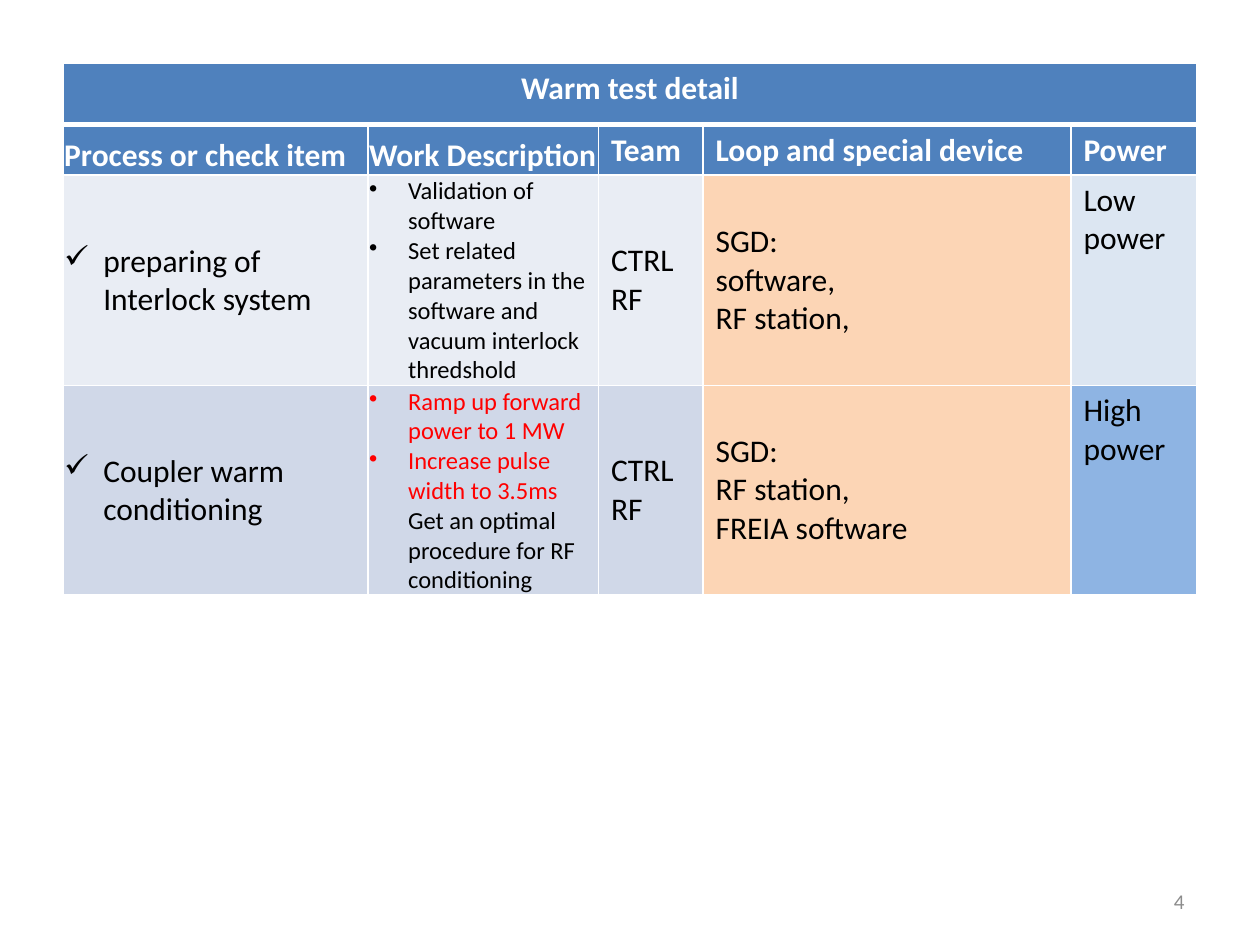
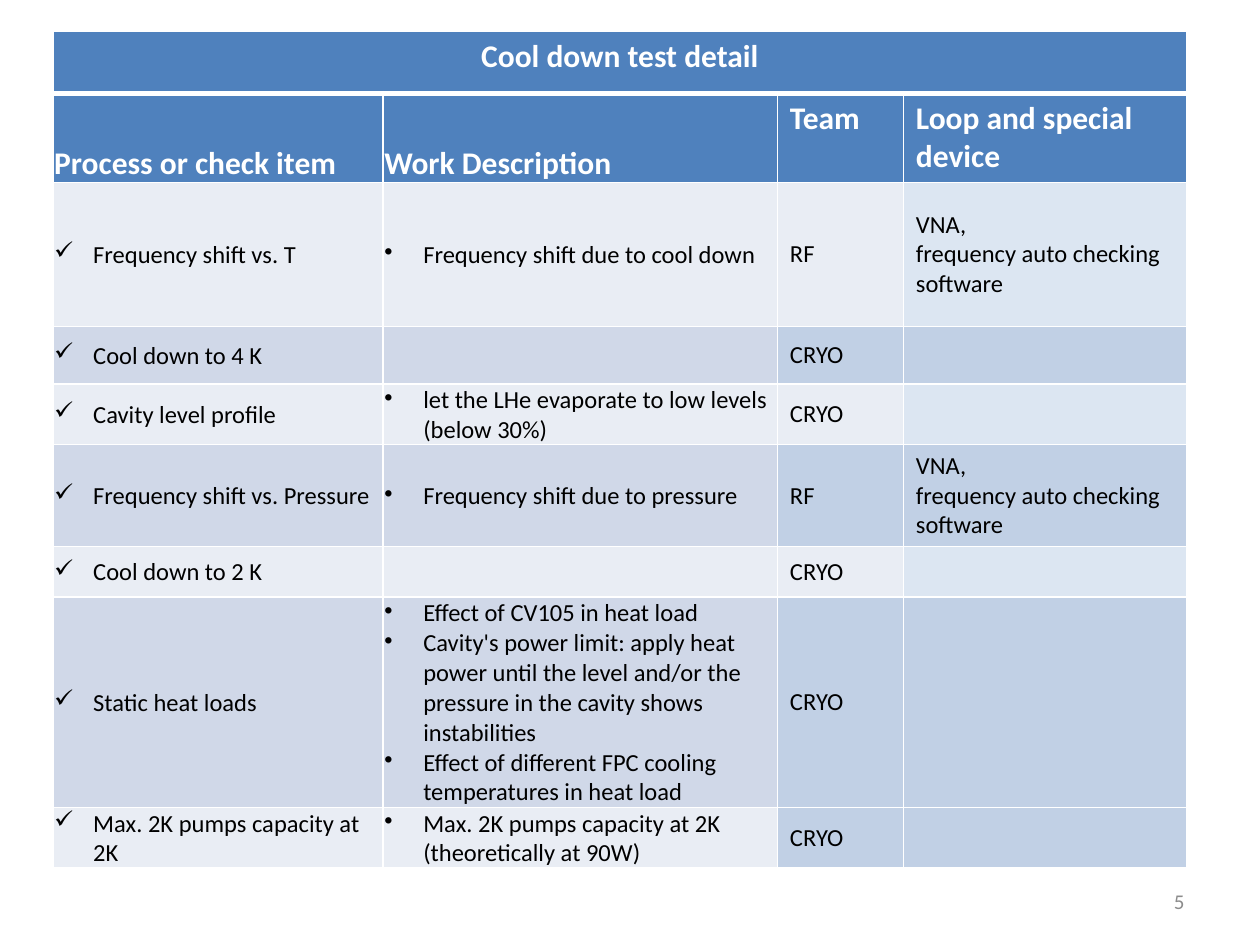
from lxml import etree
from pptx import Presentation
from pptx.dml.color import RGBColor
from pptx.enum.text import MSO_ANCHOR, PP_ALIGN
from pptx.oxml.ns import qn
from pptx.util import Inches, Pt

TOP, MIDDLE, BOTTOM = MSO_ANCHOR.TOP, MSO_ANCHOR.MIDDLE, MSO_ANCHOR.BOTTOM
CENTER, RIGHT = PP_ALIGN.CENTER, PP_ALIGN.RIGHT

FONT = "Calibri"
WHITE, BLACK, RED, GREY = "FFFFFF", "000000", "FF0000", "8C8C8C"
BLUE, PALE, MID = "4F81BD", "E9EDF4", "D0D8E8"
ICE, STEEL, PEACH, SKY = "DCE6F2", "C1D0E5", "FCD5B5", "8EB4E3"

HEADINGS = ["Process or check item", "Work Description", "Team", "Loop and special device"]
BULLETS = ["✓", "•"]
INDENT = 0.31
TIGHT = {
    "margin_left": Inches(0.01),
    "margin_right": Inches(0.01),
    "margin_top": Inches(0.01),
    "margin_bottom": 0,
}
LIGHT_ROW = [PALE, PALE, PALE, ICE]
DARK_ROW = [MID, MID, STEEL, STEEL]
LAST_ROW = [PALE, PALE, STEEL, STEEL]
VNA = ["VNA,", "frequency auto checking software"]

WARM_TEST = {
    "title": "Warm test detail",
    "place": (0.5, 0.5),
    "widths": [2.42, 1.83, 0.83, 2.92, 1],
    "heights": [0.49, 0.4, 1.67, 1.66],
    "headings": HEADINGS + ["Power"],
    "sizes": [18, 14, 18, 18, 18],
    "anchors": [MIDDLE] * 4 + [TOP],
    "rows": [
        ([PALE, PALE, PALE, PEACH, ICE], [
            ["preparing of Interlock system"],
            ["Validation of software",
             "Set related parameters in the software and vacuum interlock thredshold"],
            ["CTRL", "RF"],
            ["SGD:", "software,", "RF station,"],
            ["Low", "power"],
        ]),
        ([MID, MID, MID, PEACH, SKY], [
            ["Coupler warm conditioning"],
            [[("Ramp up forward power to 1 MW", RED)],
             [("Increase pulse width to 3.5ms ", RED),
              ("Get an optimal procedure for RF conditioning", BLACK)]],
            ["CTRL", "RF"],
            ["SGD:", "RF station,", "FREIA software"],
            ["High", "power"],
        ]),
    ],
}

COOL_DOWN_TEST = {
    "title": "Cool down test detail",
    "place": (0.42, 0.25),
    "widths": [2.62, 3.13, 1, 2.25],
    "heights": [0.49, 0.71, 1.14, 0.46, 0.48, 0.81, 0.4, 1.67, 0.48],
    "headings": HEADINGS,
    "sizes": [14] * 4,
    "anchors": [MIDDLE] * 4,
    "rows": [
        (LIGHT_ROW, [["Frequency shift vs. T"], ["Frequency shift due to cool down"],
                     ["RF"], VNA]),
        (DARK_ROW, [["Cool down to 4 K"], [], ["CRYO"], []]),
        (LIGHT_ROW, [["Cavity level profile"],
                     ["let the LHe evaporate to low levels (below 30%)"], ["CRYO"], []]),
        (DARK_ROW, [["Frequency shift vs. Pressure"], ["Frequency shift due to pressure"],
                    ["RF"], VNA]),
        (LIGHT_ROW, [["Cool down to 2 K"], [], ["CRYO"], []]),
        (DARK_ROW, [
            ["Static heat loads"],
            ["Effect of CV105 in heat load",
             "Cavity's power limit: apply heat power until the level and/or the "
             "pressure in the cavity shows instabilities",
             "Effect of different FPC cooling temperatures in heat load"],
            ["CRYO"], []]),
        (LAST_ROW, [["Max. 2K pumps capacity at 2K"],
                    ["Max. 2K pumps capacity at 2K (theoretically at 90W)"], ["CRYO"], []]),
    ],
}


def colour(value):
    return RGBColor.from_string(value)


def apply_format(target, values):
    for name, value in values.items():
        setattr(target, name, value)


def add_span(para, text, size, ink, bold=False):
    span = para.add_run()
    span.text = text
    apply_format(span.font, {"name": FONT, "size": Pt(size), "bold": bold})
    span.font.color.rgb = colour(ink)


def add_bullet(para, mark):
    properties = para._p.get_or_add_pPr()
    properties.set("marL", str(Inches(INDENT)))
    properties.set("indent", str(-Inches(INDENT)))
    etree.SubElement(properties, qn("a:buChar"), char=mark)


def write_paragraphs(frame, paragraphs, size, ink=BLACK, bold=False, align=None, mark=None):
    for index, content in enumerate(paragraphs):
        para = frame.add_paragraph() if index else frame.paragraphs[0]
        para.alignment = align
        if mark:
            add_bullet(para, mark)
        spans = [(content, ink)] if isinstance(content, str) else content
        for text, span_ink in spans:
            add_span(para, text, size, span_ink, bold)


def add_borders(cell, top=1, bottom=1):
    properties = cell._tc.get_or_add_tcPr()
    for side, width in {"L": 1, "R": 1, "T": top, "B": bottom}.items():
        line = etree.SubElement(properties, qn(f"a:ln{side}"), w=str(Pt(width)))
        fill = etree.SubElement(line, qn("a:solidFill"))
        etree.SubElement(fill, qn("a:srgbClr"), val=WHITE)


def style_cell(cell, fill, anchor, tight=False, **borders):
    add_borders(cell, **borders)
    cell.fill.solid()
    cell.fill.fore_color.rgb = colour(fill)
    cell.vertical_anchor = anchor
    if tight:
        apply_format(cell, TIGHT)


def add_test_table(page, test):
    widths, heights = test["widths"], test["heights"]
    left, top = test["place"]
    table = page.shapes.add_table(
        len(heights), len(widths), Inches(left), Inches(top),
        Inches(sum(widths)), Inches(sum(heights))).table
    for column, width in zip(table.columns, widths):
        column.width = Inches(width)
    for row, height in zip(table.rows, heights):
        row.height = Inches(height)

    for column, heading in enumerate(test["headings"]):
        tight = column < len(BULLETS)
        style_cell(table.cell(0, column), BLUE, TOP, bottom=3)
        cell = table.cell(1, column)
        style_cell(cell, BLUE, BOTTOM if tight else TOP, tight, top=3)
        write_paragraphs(cell.text_frame, [heading], 18, WHITE, True)
    title = table.cell(0, 0)
    title.merge(table.cell(0, len(widths) - 1))
    write_paragraphs(title.text_frame, [test["title"]], 18, WHITE, True, CENTER)

    for row, (fills, contents) in enumerate(test["rows"], start=2):
        for column, paragraphs in enumerate(contents):
            cell = table.cell(row, column)
            tight = column < len(BULLETS)
            style_cell(cell, fills[column], test["anchors"][column], tight)
            write_paragraphs(cell.text_frame, paragraphs, test["sizes"][column],
                             mark=BULLETS[column] if tight else None)


def add_page_number(page, number):
    box = page.shapes.add_textbox(Inches(7.17), Inches(6.95), Inches(2.33), Inches(0.4))
    apply_format(box.text_frame, {"word_wrap": True, "vertical_anchor": MIDDLE})
    write_paragraphs(box.text_frame, [str(number)], 12, GREY, align=RIGHT)


def main():
    deck = Presentation()
    apply_format(deck, {"slide_width": Inches(10), "slide_height": Inches(7.5)})
    for number, test in enumerate([WARM_TEST, COOL_DOWN_TEST], start=4):
        page = deck.slides.add_slide(deck.slide_layouts[6])
        add_page_number(page, number)
        add_test_table(page, test)
    deck.save("out.pptx")


if __name__ == "__main__":
    main()
